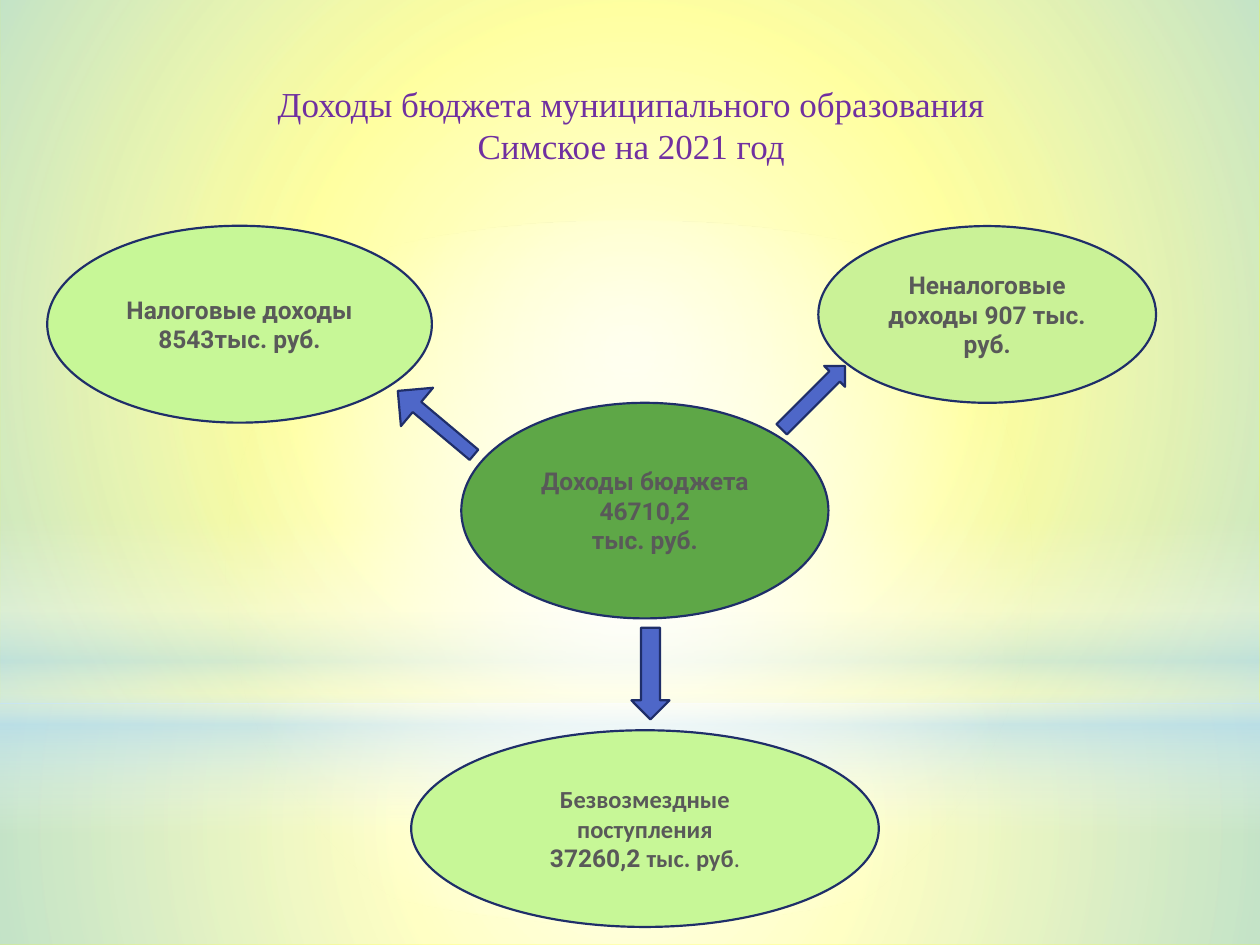
from lxml import etree
from pptx import Presentation
from pptx.dml.color import RGBColor
from pptx.enum.shapes import MSO_SHAPE
from pptx.enum.text import MSO_ANCHOR, PP_ALIGN
from pptx.oxml.ns import qn
from pptx.util import Pt

RECTANGLE, OVAL = MSO_SHAPE.RECTANGLE, MSO_SHAPE.OVAL
CONNECTOR = MSO_SHAPE.FLOWCHART_CONNECTOR
UP, DOWN, RIGHT = MSO_SHAPE.UP_ARROW, MSO_SHAPE.DOWN_ARROW, MSO_SHAPE.RIGHT_ARROW
CENTER, MIDDLE = PP_ALIGN.CENTER, MSO_ANCHOR.MIDDLE

WIDTH, HEIGHT = 720, 540
YELLOW, WHITE, SKY = "FFFF00", "FFFFFF", "B4DCFA"
PURPLE, GREY, NAVY, BLUE = "7030A0", "595959", "1F2E69", "4E67C8"
LIME, PALE_LIME, GREEN = "C7F797", "CAF297", "5EA747"

# Background layers: shape, box, gradient stops (position, colour, opacity), angle
LAYERS = [
    (RECTANGLE, (0, 401.8, WIDTH, 138.2),
     [(0, WHITE, 91), (37, WHITE, 76), (100, SKY, 79)], None),
    (RECTANGLE, (0, 0, WIDTH, 401.8),
     [(0, WHITE, 89), (48, WHITE, 62), (100, SKY, 79)], None),
    (RECTANGLE, (0, 296.6, WIDTH, 180),
     [(0, WHITE, 0), (29, WHITE, 30), (45, SKY, 40), (55, WHITE, 26),
      (65, SKY, 60), (100, WHITE, 0)], 90),
    (OVAL, (0, 126, WIDTH, 401.8), [(0, WHITE, 100), (56, WHITE, 0)], None),
]

# Budget ovals: shape, box, fill, paragraphs of (text, font, bold) runs
OVALS = [
    (CONNECTOR, (467.6, 129.2, 193, 101), PALE_LIME,
     [[("Неналоговые доходы 907 тыс. руб.", "Roboto", True)]]),
    (CONNECTOR, (27, 129, 219.8, 112.5), LIME,
     [[("Налоговые доходы 8543тыс. руб.", "Roboto", True)]]),
    (CONNECTOR, (235, 417.3, 267.2, 112.4), LIME,
     [[("Безвозмездные поступления", "Calibri", True)],
      [("37260,2 ", "Roboto", True), ("тыс. руб", "Calibri", True),
       (".", "Calibri", False)]]),
    (OVAL, (263.6, 230.2, 209.8, 123.2), GREEN,
     [[("Доходы бюджета 46710,2", "Roboto", True)],
      [("тыс. руб.", "Roboto", True)]]),
]

# Arrows: shape, box, rotation, adjustments
ARROWS = [
    (DOWN, (360.8, 358.7, 21.8, 52.4), 0, (0.5, 0.5)),
    (UP, (234.8, 213.2, 28.6, 56.8), 310, (0.265, 0.5)),
    (RIGHT, (439.2, 218.8, 51.2, 16.8), 315, (0.5, 0.5)),
]


def color(value):
    return RGBColor.from_string(value)


def add_plain_shape(slide, kind, box):
    shape = slide.shapes.add_shape(kind, *map(Pt, box))
    shape.shadow.inherit = False
    return shape


def set_solid(shape, fill):
    shape.fill.solid()
    shape.fill.fore_color.rgb = color(fill)
    shape.line.color.rgb = color(NAVY)
    shape.line.width = Pt(1.25)


def set_gradient(shape, stops, angle):
    """Gradient with transparent stops: linear at an angle, else from the centre."""
    shape.fill.gradient()
    gradient = shape.element.spPr.find(qn("a:gradFill"))
    for child in list(gradient):
        gradient.remove(child)
    stop_list = etree.SubElement(gradient, qn("a:gsLst"))
    for position, value, opacity in stops:
        stop = etree.SubElement(stop_list, qn("a:gs"), pos=str(position * 1000))
        stop_color = etree.SubElement(stop, qn("a:srgbClr"), val=value)
        etree.SubElement(stop_color, qn("a:alpha"), val=str(opacity * 1000))
    if angle is None:
        center = etree.SubElement(gradient, qn("a:path"), path="circle")
        etree.SubElement(center, qn("a:fillToRect"), dict.fromkeys("ltrb", "50000"))
    else:
        etree.SubElement(gradient, qn("a:lin"), ang=str(angle * 60000), scaled="0")


def add_background(slide):
    slide.background.fill.solid()
    slide.background.fill.fore_color.rgb = color(YELLOW)
    for kind, box, stops, angle in LAYERS:
        layer = add_plain_shape(slide, kind, box)
        layer.line.fill.background()
        set_gradient(layer, stops, angle)


def write_text(shape, paragraphs, size, text_color):
    frame = shape.text_frame
    frame.word_wrap = True
    frame.vertical_anchor = MIDDLE
    for index, runs in enumerate(paragraphs):
        paragraph = frame.add_paragraph() if index else frame.paragraphs[0]
        paragraph.alignment = CENTER
        paragraph.font.size = Pt(size)
        paragraph.font.color.rgb = color(text_color)
        for text, font, bold in runs:
            run = paragraph.add_run()
            run.text = text
            run.font.name = font
            run.font.bold = bold
            run.font.size = Pt(size)
            run.font.color.rgb = color(text_color)


def add_title(slide, box, lines):
    title = slide.shapes.add_textbox(*map(Pt, box))
    write_text(title, [[(line, "Times New Roman", False)] for line in lines], 20, PURPLE)


def add_oval(slide, kind, box, fill, paragraphs):
    oval = add_plain_shape(slide, kind, box)
    set_solid(oval, fill)
    write_text(oval, paragraphs, 14, GREY)


def add_arrow(slide, kind, box, rotation, adjustments):
    arrow = add_plain_shape(slide, kind, box)
    set_solid(arrow, BLUE)
    arrow.rotation = rotation
    for index, value in enumerate(adjustments):
        arrow.adjustments[index] = value


def main():
    presentation = Presentation()
    presentation.slide_width, presentation.slide_height = Pt(WIDTH), Pt(HEIGHT)
    slide = presentation.slides.add_slide(presentation.slide_layouts[6])
    add_background(slide)
    add_title(slide, (36.7, 31.7, 648, 79.2),
              ["Доходы бюджета муниципального образования", "Симское на 2021 год"])
    for oval in OVALS:
        add_oval(slide, *oval)
    for arrow in ARROWS:
        add_arrow(slide, *arrow)
    presentation.save("out.pptx")


if __name__ == "__main__":
    main()
